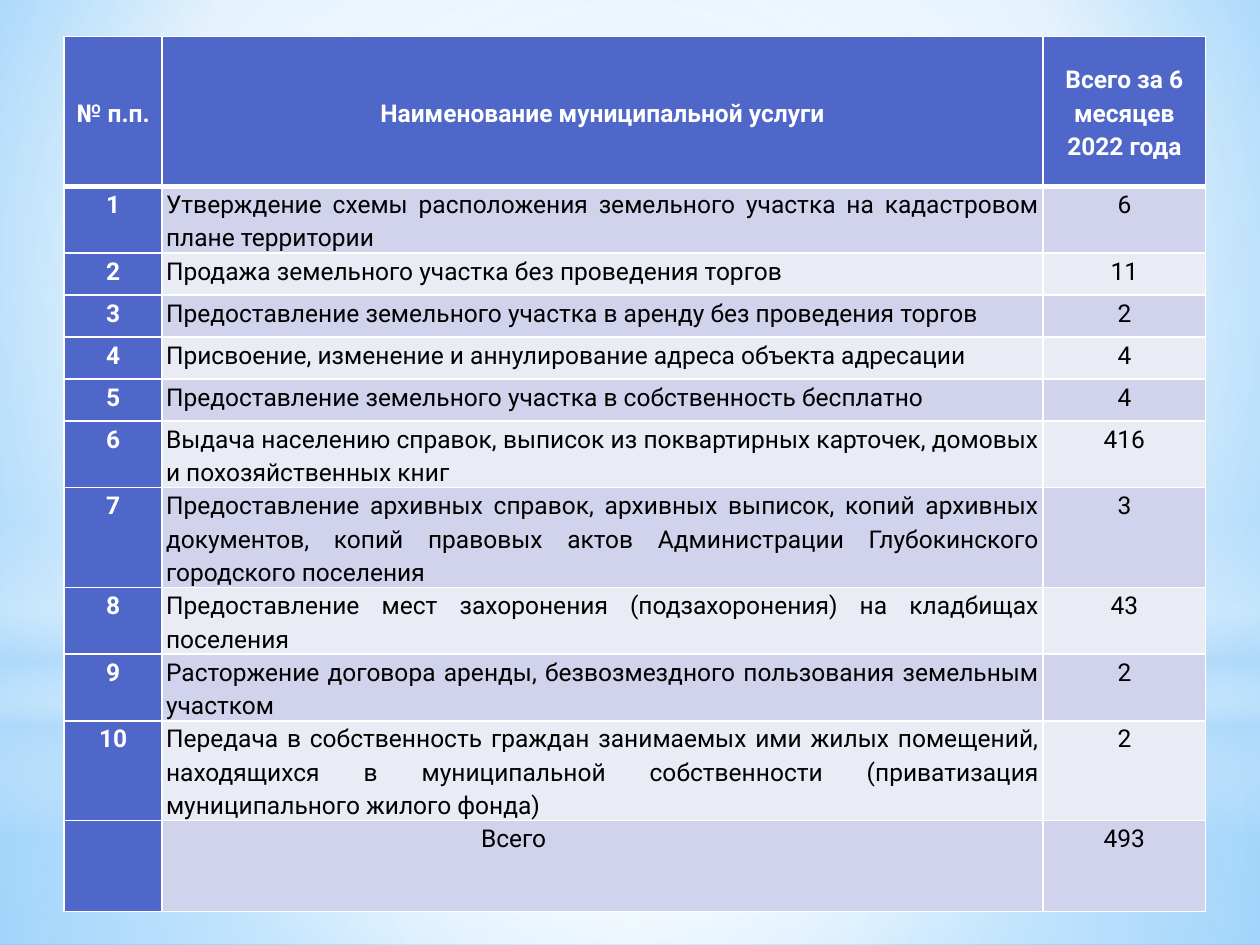
from dataclasses import dataclass

from lxml import etree
from pptx import Presentation
from pptx.dml.color import RGBColor
from pptx.enum.shapes import MSO_SHAPE
from pptx.enum.text import MSO_ANCHOR, PP_ALIGN
from pptx.oxml.ns import qn
from pptx.util import Pt

RECTANGLE, ELLIPSE = MSO_SHAPE.RECTANGLE, MSO_SHAPE.OVAL
CENTER, JUSTIFY, LEFT = PP_ALIGN.CENTER, PP_ALIGN.JUSTIFY, PP_ALIGN.LEFT
TOP, MIDDLE = MSO_ANCHOR.TOP, MSO_ANCHOR.MIDDLE


@dataclass(frozen=True)
class Theme:
    font: str = "Roboto"
    size: float = 14
    line_spacing: float = 1.15
    white: str = "FFFFFF"
    black: str = "000000"
    accent: str = "4E67C8"
    bands: tuple = ("D0D3EB", "E9EBF5")
    haze: str = "B4DCFA"
    sky: str = "9ED5FF"
    deep_sky: str = "5BB9FF"
    thin: float = 1
    thick: float = 3


THEME = Theme()
WIDTH, HEIGHT = 720, 540
TABLE_FRAME = (36.7, 20.9, 652.3, 504)
COLUMNS = (56, 503.4, 92.9)
HEADER_HEIGHT, TOTAL_HEIGHT = 85.7, 51.8
ONE_LINE, TWO_LINES, THREE_LINES = 24, 36.7, 49
TOTAL_INDENT = 180

HEADERS = ("№ п.п.", "Наименование муниципальной услуги", "Всего за 6 месяцев 2022 года")
SERVICES = (
    ("Утверждение схемы расположения земельного участка на кадастровом плане территории",
     6, TWO_LINES),
    ("Продажа земельного участка без проведения торгов", 11, ONE_LINE),
    ("Предоставление земельного участка в аренду без проведения торгов", 2, ONE_LINE),
    ("Присвоение, изменение и аннулирование адреса объекта адресации", 4, ONE_LINE),
    ("Предоставление земельного участка в собственность бесплатно", 4, ONE_LINE),
    ("Выдача населению справок, выписок из поквартирных карточек, домовых "
     "и похозяйственных книг", 416, TWO_LINES),
    ("Предоставление архивных справок, архивных выписок, копий архивных документов, "
     "копий правовых актов Администрации Глубокинского городского поселения",
     3, THREE_LINES),
    ("Предоставление мест захоронения (подзахоронения) на кладбищах поселения",
     43, ONE_LINE),
    ("Расторжение договора аренды, безвозмездного пользования земельным участком",
     2, TWO_LINES),
    ("Передача в собственность граждан занимаемых ими жилых помещений, находящихся "
     "в муниципальной собственности (приватизация муниципального жилого фонда)",
     2, THREE_LINES),
)


def add_node(parent, tag, **attributes):
    return etree.SubElement(parent, qn(tag), {k: str(v) for k, v in attributes.items()})


def write_text(box, text, *, color, bold=False, align=CENTER, indent=0):
    para = box.paragraphs[0]
    para.alignment = align
    para.line_spacing = THEME.line_spacing
    if indent:
        para._p.get_or_add_pPr().set("marL", str(Pt(indent)))
    span = para.add_run()
    span.text = text
    span.font.name, span.font.size, span.font.bold = THEME.font, Pt(THEME.size), bold
    span.font.color.rgb = RGBColor.from_string(color)


class PageBuilder:
    def __init__(self, page, theme):
        self.page, self.theme = page, theme

    def gradient(self, holder, stops, center=None, angle=90):
        """Replace a solid fill; stops are (position, colour, opacity) in percent."""
        solid = holder.find(qn("a:solidFill"))
        fill = etree.Element(qn("a:gradFill"), rotWithShape="1")
        stop_list = add_node(fill, "a:gsLst")
        for position, color, opacity in stops:
            stop = add_node(stop_list, "a:gs", pos=position * 1000)
            tint = add_node(stop, "a:srgbClr", val=color)
            if opacity < 100:
                add_node(tint, "a:alpha", val=opacity * 1000)
        if center:
            route = add_node(fill, "a:path", path="circle")
            sides = {side: value * 1000 for side, value in zip("ltrb", center)}
            add_node(route, "a:fillToRect", **sides)
        else:
            add_node(fill, "a:lin", ang=angle * 60000, scaled=0)
        holder.replace(solid, fill)

    def background(self, stops, center):
        self.page.background.fill.solid()
        self.page.background.fill.fore_color.rgb = RGBColor.from_string(self.theme.white)
        self.gradient(self.page._element.xpath(".//p:bgPr")[0], stops, center)

    def glow(self, kind, top, height, stops, center=None):
        shape = self.page.shapes.add_shape(kind, 0, Pt(top), Pt(WIDTH), Pt(height))
        shape.shadow.inherit = False
        shape.line.fill.background()
        shape.fill.solid()
        self.gradient(shape._element.spPr, stops, center)

    def table(self, frame, columns, heights):
        holder = self.page.shapes.add_table(len(heights), len(columns), *map(Pt, frame))
        table = holder.table
        table.first_col = True
        for column, width in zip(table.columns, columns):
            column.width = Pt(width)
        for row, height in zip(table.rows, heights):
            row.height = Pt(height)
        return table

    def cell(self, cell, text, fill, *, anchor=TOP, top=None, bottom=None, **text_format):
        cell.margin_left = cell.margin_right = Pt(2.2)
        cell.margin_top = cell.margin_bottom = 0
        cell.vertical_anchor = anchor
        properties = cell._tc.get_or_add_tcPr()
        thin = self.theme.thin
        for side, width in zip("LRTB", (thin, thin, top or thin, bottom or thin)):
            line = add_node(properties, f"a:ln{side}", w=Pt(width))
            add_node(add_node(line, "a:solidFill"), "a:srgbClr", val=self.theme.white)
        cell.fill.solid()
        cell.fill.fore_color.rgb = RGBColor.from_string(fill)
        if text:
            write_text(cell.text_frame, text, **text_format)


def main():
    deck = Presentation()
    deck.slide_width, deck.slide_height = Pt(WIDTH), Pt(HEIGHT)
    builder = PageBuilder(deck.slides.add_slide(deck.slide_layouts[6]), THEME)
    white, haze = THEME.white, THEME.haze
    middle = (50, 50, 50, 50)

    # Sky backdrop
    builder.background([(0, THEME.sky, 100), (60, white, 100), (100, THEME.deep_sky, 100)],
                       (20, 10, 20, 60))
    builder.glow(RECTANGLE, 402, 138, [(0, white, 91), (37, white, 76), (100, haze, 79)], middle)
    builder.glow(RECTANGLE, 0, 402, [(0, white, 89), (48, white, 62), (100, haze, 79)], middle)
    builder.glow(RECTANGLE, 297, 180, [(0, white, 0), (29, white, 30), (45, haze, 40),
                                       (55, white, 26), (65, haze, 60), (100, white, 0)])
    builder.glow(ELLIPSE, 126, 402, [(0, white, 100), (56, white, 0)], middle)

    # Table header
    heights = [HEADER_HEIGHT, *(height for _, _, height in SERVICES), TOTAL_HEIGHT]
    table = builder.table(TABLE_FRAME, COLUMNS, heights)
    for column, text in enumerate(HEADERS):
        builder.cell(table.cell(0, column), text, THEME.accent, anchor=MIDDLE,
                     bottom=THEME.thick, color=white, bold=True)

    # Services and the total row
    rows = [(str(number), name, count, {"align": JUSTIFY})
            for number, (name, count, _) in enumerate(SERVICES, 1)]
    total = sum(count for _, count, _ in SERVICES)
    rows.append(("", "Всего", total, {"align": LEFT, "indent": TOTAL_INDENT}))
    for index, (number, name, count, name_format) in enumerate(rows, 1):
        band = THEME.bands[(index - 1) % 2]
        top = THEME.thick if index == 1 else THEME.thin
        builder.cell(table.cell(index, 0), number, THEME.accent, top=top, color=white, bold=True)
        builder.cell(table.cell(index, 1), name, band, top=top, color=THEME.black, **name_format)
        builder.cell(table.cell(index, 2), str(count), band, top=top, color=THEME.black)

    deck.save("out.pptx")


if __name__ == "__main__":
    main()
